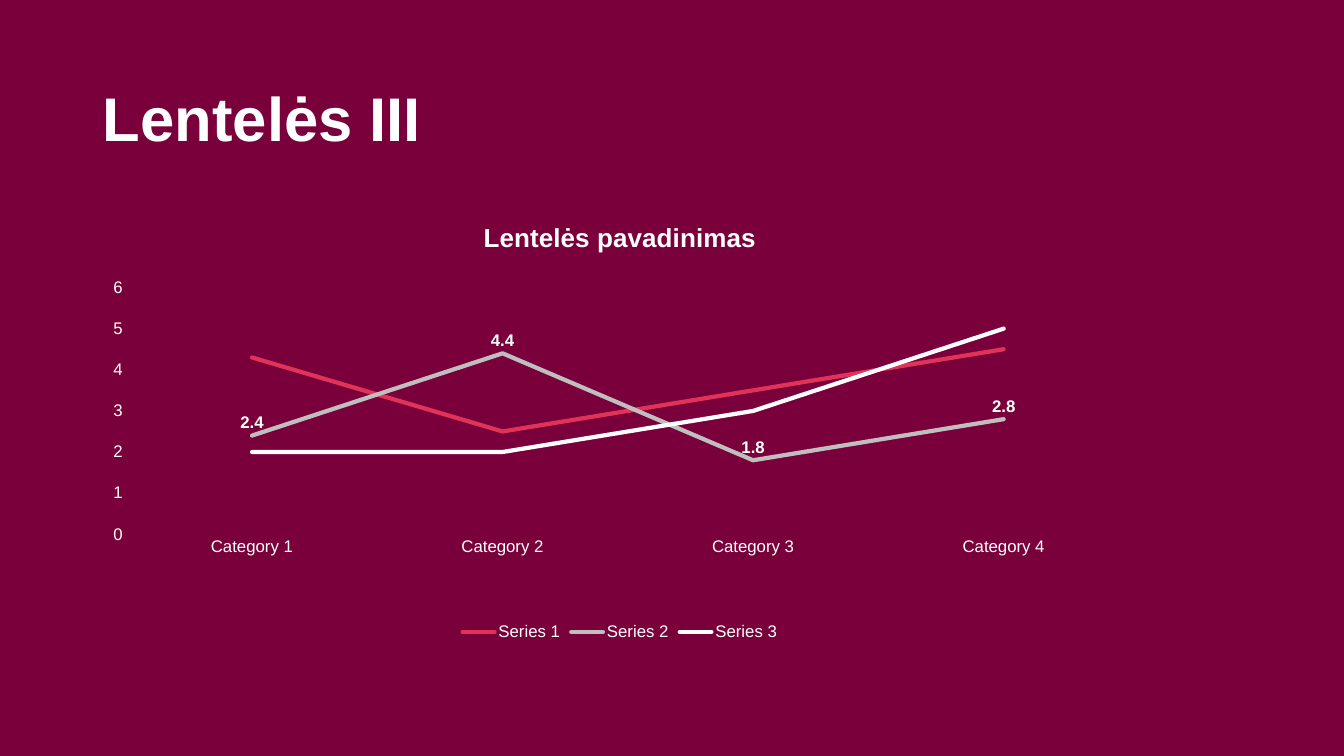
"""Build the maroon slide with a three-series line chart."""
from dataclasses import dataclass

from lxml.etree import SubElement
from pptx import Presentation
from pptx.chart.chart import Chart
from pptx.chart.data import CategoryChartData
from pptx.dml.color import RGBColor
from pptx.enum.chart import XL_CHART_TYPE as ChartType
from pptx.enum.chart import XL_LABEL_POSITION as LabelPos
from pptx.enum.chart import XL_LEGEND_POSITION as LegendPos
from pptx.enum.chart import XL_MARKER_STYLE as Marker
from pptx.enum.chart import XL_TICK_MARK as Tick
from pptx.enum.text import MSO_ANCHOR as Anchor
from pptx.oxml.ns import qn
from pptx.slide import Slide
from pptx.text.text import Font
from pptx.util import Emu, Pt

COLORS = {"maroon": "7A003B", "white": "FFFFFF", "red": "E03357", "gray": "BFBFBF"}
FONT = "Arial"
CATEGORIES = [f"Category {n}" for n in range(1, 5)]
PLOT = {"x": 0.032, "y": 0.195, "w": 0.951, "h": 0.556}


@dataclass(frozen=True)
class Line:
    name: str
    values: tuple[float, ...]
    color: str
    labelled: bool = False


LINES = [
    Line("Series 1", (4.3, 2.5, 3.5, 4.5), "red"),
    Line("Series 2", (2.4, 4.4, 1.8, 2.8), "gray", True),
    Line("Series 3", (2, 2, 3, 5), "white"),
]


def px(n: int) -> Emu:
    return Emu(round(n * 914400 / 100.8))


def rgb(name: str) -> RGBColor:
    return RGBColor.from_string(COLORS[name])


def style(font: Font, size: float, bold: bool = False) -> None:
    font.name, font.size, font.bold = FONT, Pt(size), bold
    font.color.rgb = rgb("white")


def add_heading(s: Slide, text: str) -> None:
    tf = s.shapes.add_textbox(px(93), px(79), px(985), px(146)).text_frame
    tf.word_wrap = True
    tf.vertical_anchor = Anchor.TOP
    tf.margin_top = px(9)
    p = tf.paragraphs[0]
    p.text = text
    p.line_spacing = 0.9
    style(p.runs[0].font, 44, True)


def place_plot(chart: Chart) -> None:
    plot_area = chart._chartSpace.chart.plotArea
    for old in plot_area.findall(qn("c:layout")):
        plot_area.remove(old)
    layout = SubElement(plot_area, qn("c:layout"))
    plot_area.insert(0, layout)
    manual = SubElement(layout, qn("c:manualLayout"))
    settings = {"layoutTarget": "inner", "xMode": "edge", "yMode": "edge", **PLOT}
    for tag, value in settings.items():
        SubElement(manual, qn(f"c:{tag}")).set("val", str(value))


def style_axes(chart: Chart) -> None:
    for axis in (chart.category_axis, chart.value_axis):
        axis.has_major_gridlines = False
        axis.major_tick_mark = axis.minor_tick_mark = Tick.NONE
        axis.format.line.fill.background()
        style(axis.tick_labels.font, 12)
    scale = chart.value_axis
    scale.minimum_scale, scale.maximum_scale, scale.major_unit = 0, 6, 1


def style_lines(chart: Chart) -> None:
    chart.plots[0].vary_by_categories = False
    for line, ser in zip(LINES, chart.plots[0].series):
        ser.smooth = False
        ser.marker.style = Marker.NONE
        ser.format.line.width = Pt(3)
        ser.format.line.color.rgb = rgb(line.color)
        ser.format.line._get_or_add_ln().set("cap", "rnd")
        if line.labelled:
            labels = ser.data_labels
            labels.show_value = True
            labels.position = LabelPos.ABOVE
            style(labels.font, 12, True)


def add_line_chart(s: Slide, title: str) -> None:
    data = CategoryChartData()
    data.categories = CATEGORIES
    for line in LINES:
        data.add_series(line.name, line.values)
    chart = s.shapes.add_chart(
        ChartType.LINE, px(93), px(201), px(1054), px(444), data
    ).chart
    style(chart.font, 10)
    chart.has_title = True
    chart.chart_title.include_in_layout = False
    p = chart.chart_title.text_frame.paragraphs[0]
    p.text = title
    style(p.runs[0].font, 18.6, True)
    chart.has_legend = True
    chart.legend.position = LegendPos.BOTTOM
    chart.legend.include_in_layout = False
    style(chart.legend.font, 12)
    style_axes(chart)
    style_lines(chart)
    place_plot(chart)


def main() -> None:
    prs = Presentation()
    prs.slide_width, prs.slide_height = px(1344), px(756)
    s = prs.slides.add_slide(prs.slide_layouts[6])
    s.background.fill.solid()
    s.background.fill.fore_color.rgb = rgb("maroon")
    add_heading(s, "Lentelės III")
    add_line_chart(s, "Lentelės pavadinimas")
    prs.save("out.pptx")


if __name__ == "__main__":
    main()
